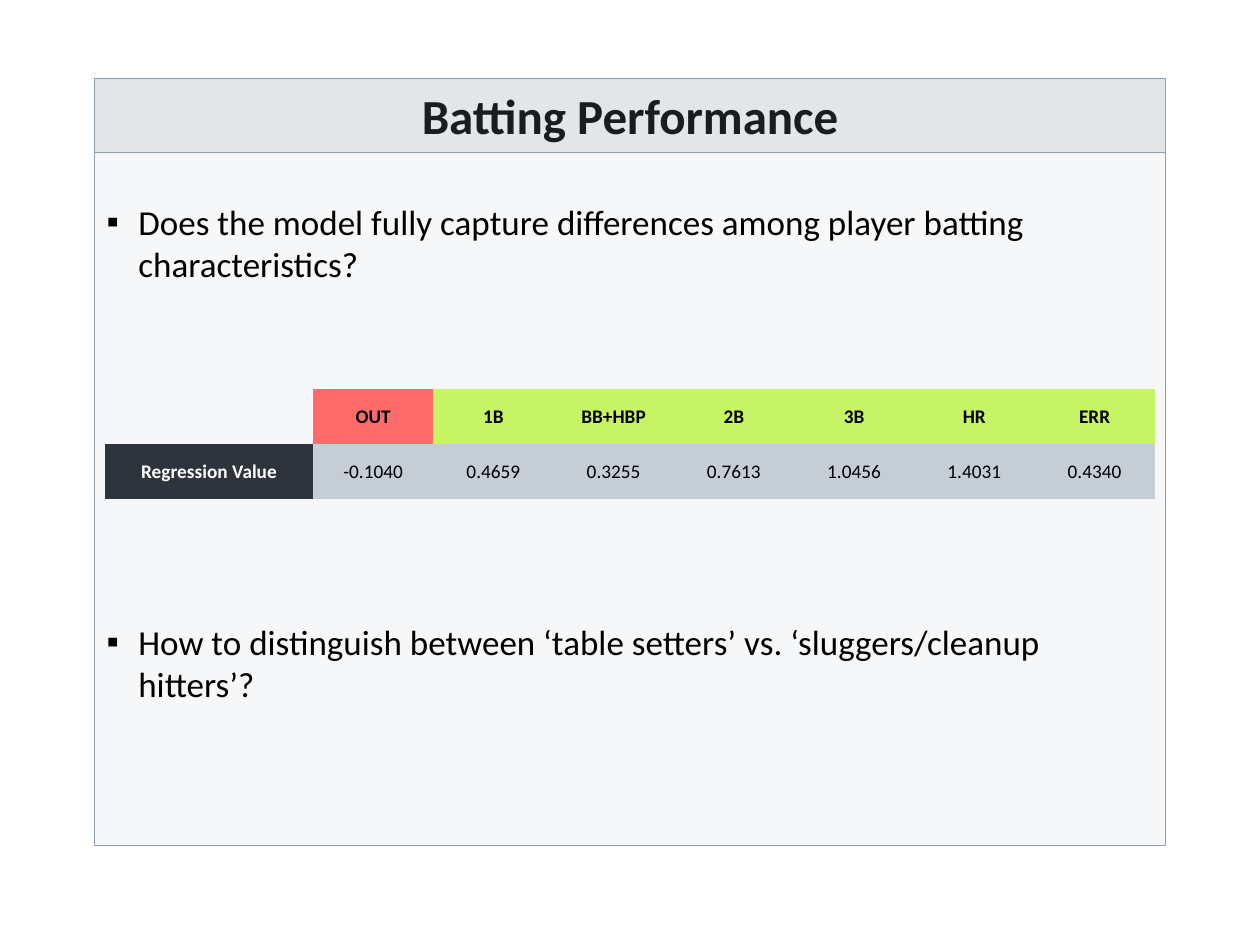
from lxml import etree
from pptx import Presentation
from pptx.dml.color import RGBColor
from pptx.enum.shapes import MSO_SHAPE as Shape
from pptx.enum.text import MSO_ANCHOR as Anchor, PP_ALIGN as Align
from pptx.oxml.ns import qn
from pptx.util import Cm, Pt

FONT = "Calibri"
BLACK = "000000"
NO_STYLE_NO_GRID = "{2D5ABB26-0587-4C30-8999-92F81FD0307C}"

LEFT, WIDTH = 1.9, 21.6
TABLE_MARGIN, LABEL_WIDTH, ROW_HEIGHT = 0.22, 4.19, 1.11

QUESTIONS = [
    "Does the model fully capture differences among player batting characteristics?",
    "How to distinguish between ‘table setters’ vs. ‘sluggers/cleanup hitters’?",
]
EVENTS = ["OUT", "1B", "BB+HBP", "2B", "3B", "HR", "ERR"]
VALUES = ["-0.1040", "0.4659", "0.3255", "0.7613", "1.0456", "1.4031", "0.4340"]


def rgb(value):
    return RGBColor.from_string(value)


def style_text(p, size, color, bold=False, align=Align.LEFT):
    p.alignment = align
    for r in p.runs:
        r.font.name = FONT
        r.font.size = Pt(size)
        r.font.bold = bold
        r.font.color.rgb = rgb(color)


def add_panel(s, box, fill):
    sp = s.shapes.add_shape(Shape.RECTANGLE, *(Cm(v) for v in box))
    sp.shadow.inherit = False
    sp.fill.solid()
    sp.fill.fore_color.rgb = rgb(fill)
    sp.line.color.rgb = rgb("909DAA")
    sp.line.width = Pt(0.75)
    return sp


def add_title(s, box, text):
    tf = add_panel(s, box, "E3E6E9").text_frame
    tf.vertical_anchor = Anchor.MIDDLE
    tf.text = text
    style_text(tf.paragraphs[0], 28, "191D21", True, Align.CENTER)


def add_bullet(p, indent):
    pPr = p._p.get_or_add_pPr()
    pPr.set("marL", str(indent))
    pPr.set("indent", str(-indent))
    etree.SubElement(pPr, qn("a:buFont"), typeface="Arial")
    etree.SubElement(pPr, qn("a:buChar"), char="▪")


def add_questions(s, box, questions):
    tf = add_panel(s, box, "F6F7F8").text_frame
    tf.word_wrap = True
    tf.vertical_anchor = Anchor.TOP
    tf.margin_top = Cm(0.98)
    tf.text = "\n".join(questions)
    for i, p in enumerate(tf.paragraphs):
        # The gap between the questions leaves room for the table
        p.space_before = Pt(192 if i else 0)
        style_text(p, 20, BLACK)
        add_bullet(p, Cm(0.64))


def add_table_row(s, box, cells):
    """Add a one-row table; each cell is (text, fill, text colour, bold)."""
    left, top, width, height = box
    table = s.shapes.add_table(1, len(cells), Cm(left), Cm(top),
                               Cm(width), Cm(height)).table
    table.first_row = table.horz_banding = False
    table._tbl.tblPr.find(qn("a:tableStyleId")).text = NO_STYLE_NO_GRID
    value_width = (width - LABEL_WIDTH) / (len(cells) - 1)
    for i, (text, fill, color, bold) in enumerate(cells):
        table.columns[i].width = Cm(value_width if i else LABEL_WIDTH)
        cell = table.cell(0, i)
        cell.margin_left = cell.margin_right = 0
        cell.margin_top = cell.margin_bottom = 0
        cell.vertical_anchor = Anchor.MIDDLE
        if not fill:
            cell.fill.background()
            continue
        cell.fill.solid()
        cell.fill.fore_color.rgb = rgb(fill)
        cell.text = text
        style_text(cell.text_frame.paragraphs[0], 11, color, bold, Align.CENTER)


def add_regression_table(s, box):
    left, top, width, height = box
    header = [("", None, BLACK, True)] + [
        (event, "FF6B6B" if event == "OUT" else "C7F464", BLACK, True)
        for event in EVENTS]
    values = [("Regression Value", "2D343B", "FFFFFF", True)] + [
        (value, "C5CDD5", BLACK, False) for value in VALUES]
    for i, cells in enumerate((header, values)):
        add_table_row(s, (left, top + i * height, width, height), cells)


def main():
    prs = Presentation()
    prs.slide_width, prs.slide_height = Cm(25.4), Cm(19.05)
    s = prs.slides.add_slide(prs.slide_layouts[6])

    # Title band and body panel
    add_title(s, (LEFT, 1.58, WIDTH, 1.49), "Batting Performance")
    add_questions(s, (LEFT, 3.07, WIDTH, 13.97), QUESTIONS)

    # Regression values between the two questions
    add_regression_table(s, (LEFT + TABLE_MARGIN, 7.84,
                             WIDTH - 2 * TABLE_MARGIN, ROW_HEIGHT))

    prs.save("out.pptx")


if __name__ == "__main__":
    main()
